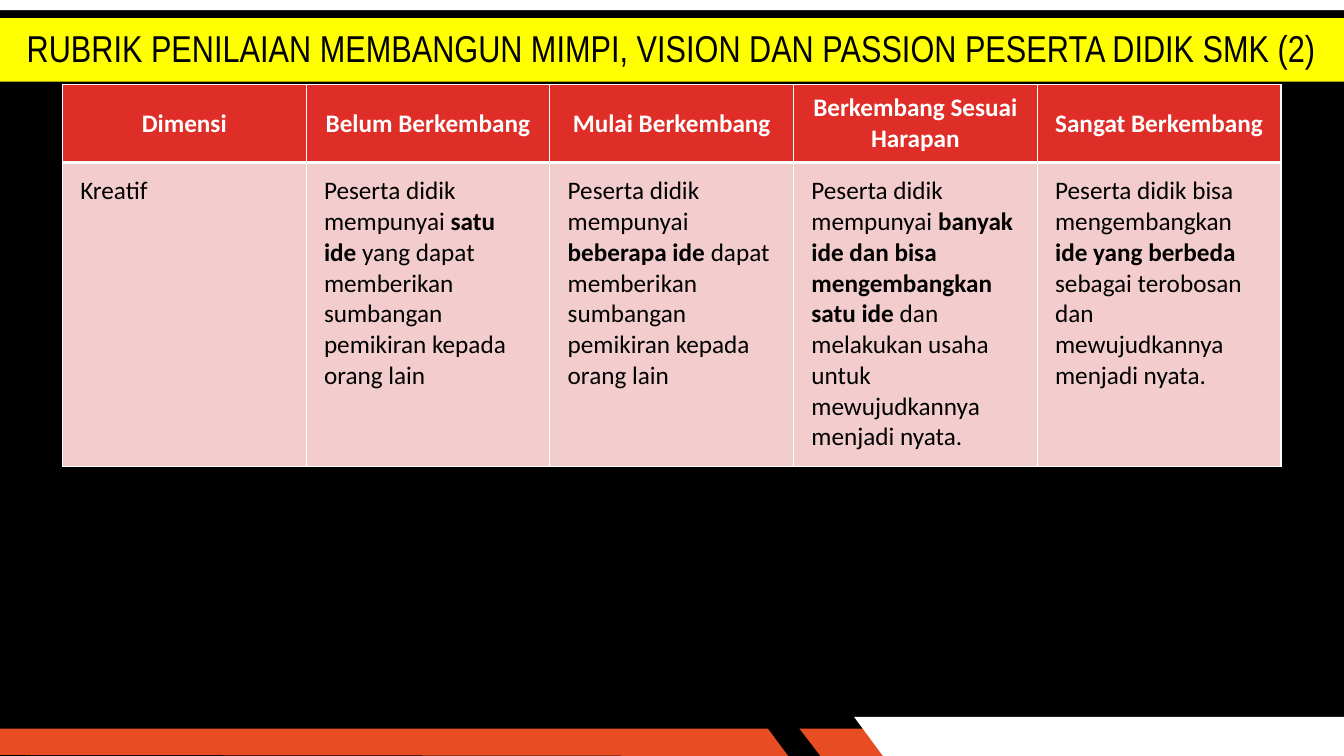
from lxml import etree
from pptx import Presentation
from pptx import util as u
from pptx.dml.color import RGBColor
from pptx.enum import shapes, text
from pptx.oxml import ns

BLACK = RGBColor(0x00, 0x00, 0x00)
WHITE = RGBColor(0xFF, 0xFF, 0xFF)
YELLOW = RGBColor(0xFF, 0xFF, 0x00)
ORANGE = RGBColor(0xE8, 0x4C, 0x22)
RED = RGBColor(0xDF, 0x2E, 0x28)
PINK = RGBColor(0xF3, 0xCD, 0xCD)

WIDE, HIGH = 960, 540
TITLE = "RUBRIK PENILAIAN MEMBANGUN MIMPI, VISION DAN PASSION PESERTA DIDIK SMK (2)"
HEADS = ["Dimensi", "Belum Berkembang", "Mulai Berkembang",
         "Berkembang Sesuai\nHarapan", "Sangat Berkembang"]
# Odd-numbered pieces of each cell are bold.
LEVELS = [
    ["Kreatif"],
    ["Peserta didik mempunyai ", "satu ide ",
     "yang dapat memberikan sumbangan pemikiran kepada orang lain"],
    ["Peserta didik mempunyai ", "beberapa ide ",
     "dapat memberikan sumbangan pemikiran kepada orang lain"],
    ["Peserta didik mempunyai ", "banyak ide dan bisa mengembangkan satu ide ",
     "dan melakukan usaha untuk mewujudkannya menjadi nyata."],
    ["Peserta didik bisa mengembangkan ", "ide yang berbeda",
     " sebagai terobosan dan mewujudkannya menjadi nyata."],
]


class Deck:
    title = {"name": "Arial Narrow", "size": u.Pt(26.7), "bold": False}
    cell = {"name": "Calibri", "size": u.Pt(18)}

    def __init__(self):
        self.prs = Presentation()
        self.prs.slide_width, self.prs.slide_height = u.Pt(WIDE), u.Pt(HIGH)
        self.slide = self.prs.slides.add_slide(self.prs.slide_layouts[6])
        self.paint(self.slide.background, BLACK)

    def paint(self, item, color):
        item.fill.solid()
        item.fill.fore_color.rgb = color

    def flat(self, shape, color):
        """Give a shape a plain fill with no line or shadow."""
        self.paint(shape, color)
        shape.line.fill.background()
        shape.shadow.inherit = False
        return shape

    def bar(self, top, height, color):
        bar = self.slide.shapes.add_shape(
            shapes.MSO_SHAPE.RECTANGLE, 0, u.Pt(top), u.Pt(WIDE), u.Pt(height))
        return self.flat(bar, color)

    def poly(self, points, color):
        start, *rest = [(u.Pt(x), u.Pt(y)) for x, y in points]
        form = self.slide.shapes.build_freeform(*start)
        form.add_line_segments(rest)
        return self.flat(form.convert_to_shape(), color)

    def run(self, para, words, color, style):
        for i, line in enumerate(words.split("\n")):
            if i:
                para.add_line_break()
            run = para.add_run()
            run.text = line
            for key, value in style.items():
                setattr(run.font, key, value)
            run.font.color.rgb = color

    def head(self, words, top, height):
        frame = self.bar(top, height, YELLOW).text_frame
        frame.word_wrap = True
        frame.vertical_anchor = text.MSO_ANCHOR.MIDDLE
        para = frame.paragraphs[0]
        para.alignment = text.PP_ALIGN.CENTER
        para.line_spacing = 0.9
        self.run(para, words, BLACK, self.title)

    def edge(self, cell, widths):
        """Draw white borders; widths are left, right, top, bottom."""
        props = cell._tc.get_or_add_tcPr()
        for side, width in zip("LRTB", widths):
            line = etree.SubElement(props, ns.qn("a:ln" + side), w=str(u.Pt(width)))
            fill = etree.SubElement(line, ns.qn("a:solidFill"))
            etree.SubElement(fill, ns.qn("a:srgbClr"), val=str(WHITE))

    def fill(self, cell, parts, head):
        self.edge(cell, (1, 1, 1, 3) if head else (1, 1, 3, 1))
        self.paint(cell, RED if head else PINK)
        cell.margin_left = cell.margin_right = u.Pt(9.6 if head else 12.8)
        cell.margin_top = cell.margin_bottom = u.Pt(3.6 if head else 9.6)
        cell.vertical_anchor = text.MSO_ANCHOR.MIDDLE if head else text.MSO_ANCHOR.TOP
        para = cell.text_frame.paragraphs[0]
        para.alignment = text.PP_ALIGN.CENTER if head else text.PP_ALIGN.LEFT
        for i, part in enumerate(parts):
            bold = head or i % 2 == 1
            self.run(para, part, WHITE if head else BLACK, {**self.cell, "bold": bold})

    def table(self, rows, left, top, width, heights):
        grid = self.slide.shapes.add_table(
            len(rows), len(rows[0]), u.Pt(left), u.Pt(top),
            u.Pt(width), u.Pt(sum(heights))).table
        grid.horz_banding = False
        for r, row in enumerate(rows):
            grid.rows[r].height = u.Pt(heights[r])
            for c, parts in enumerate(row):
                self.fill(grid.cell(r, c), parts, r == 0)


def main():
    deck = Deck()
    deck.poly([(571, 520.5), (646.5, 520.5), (646.5, HIGH), (586, HIGH)], ORANGE)
    deck.poly([(0, 520.5), (548.5, 520.5), (563, HIGH), (0, HIGH - 0.7)], ORANGE)
    deck.bar(0, 7.2, WHITE)
    deck.poly([(610, 512), (WIDE, 512), (WIDE, HIGH), (630.7, HIGH)], WHITE)
    deck.head(TITLE, 13, 45.4)
    deck.table([[[name] for name in HEADS], LEVELS], 44.6, 60.6, 870.5, [55.5, 216])
    deck.prs.save("out.pptx")


if __name__ == "__main__":
    main()
